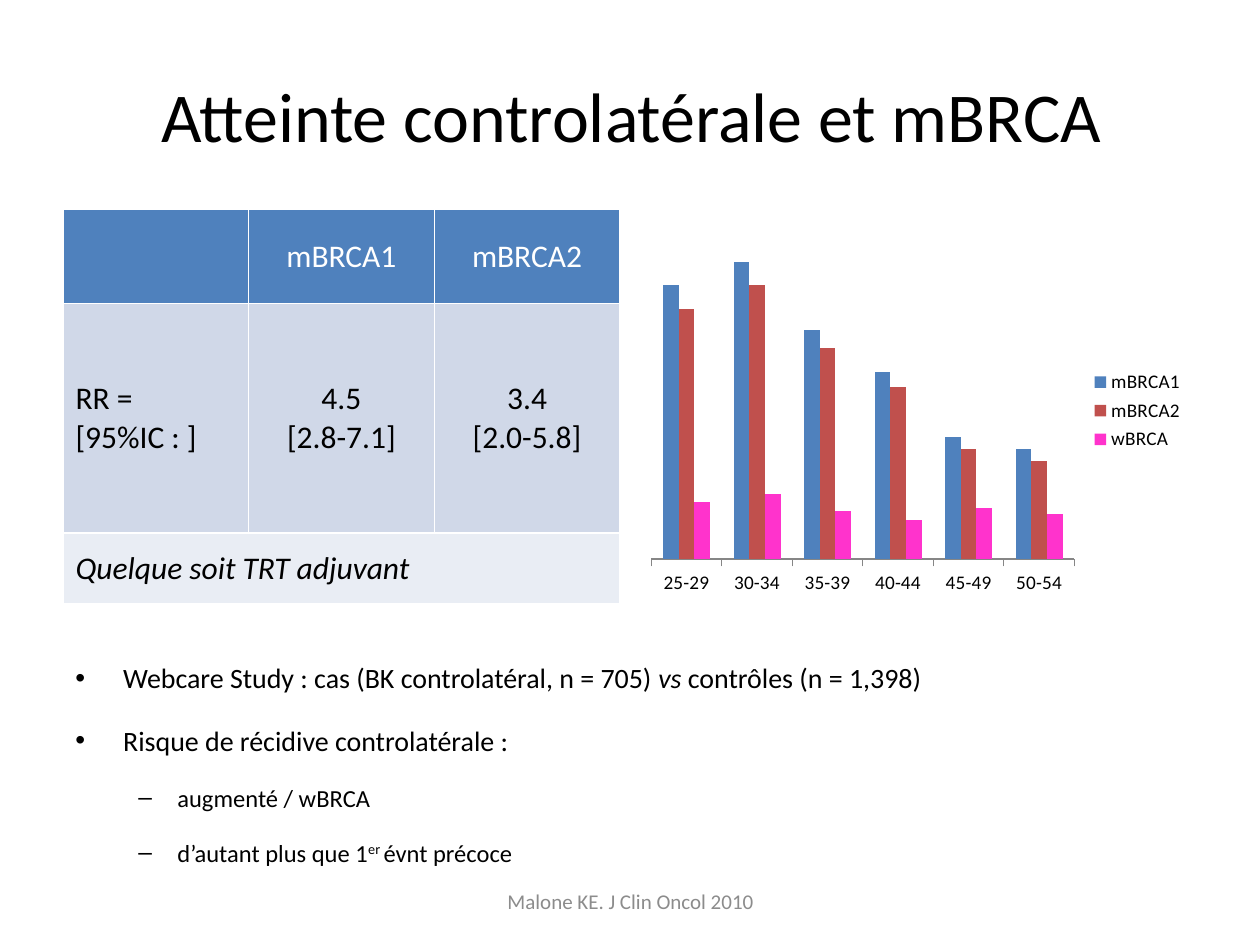
"""Builds a slide on contralateral risk: a table, a bar chart and key points."""
from dataclasses import dataclass, field
from typing import Any

from lxml import etree
from pptx import Presentation, util as u
from pptx.chart.data import CategoryChartData
from pptx.dml.color import RGBColor
from pptx.enum import chart as charts, text
from pptx.oxml import parse_xml
from pptx.oxml.ns import nsdecls, qn


@dataclass
class Theme:
    """Colours, font and type sizes of the slide."""
    font: str = "Calibri"
    black: str = "000000"
    white: str = "FFFFFF"
    grey: str = "8C8C8C"
    axis: str = "868686"
    header: str = "4F81BD"
    bands: tuple = ("D0D8E8", "E9EDF4")
    series: tuple = ("4F81BD", "C0504D", "FF33CC")
    title: int = 40
    cell: int = 18
    levels: tuple = (16, 14)
    source: int = 12
    chart: int = 11


def place(left, top, width, height):
    """Turn inches into a position and size."""
    return [u.Inches(value) for value in (left, top, width, height)]


def add_span(para, words, font, size, color, italic=False, baseline=0):
    """Add one formatted run to a paragraph."""
    span = para.add_run()
    span.text = words
    span.font.name, span.font.size, span.font.italic = font, u.Pt(size), italic
    span.font.color.rgb = RGBColor.from_string(color)
    if baseline:
        span.font._element.set("baseline", str(baseline * 1000))


def add_bullet(para, sign, margin, indent):
    """Give a paragraph a bullet with a hanging indent."""
    properties = para._p.get_or_add_pPr()
    properties.set("marL", str(u.Inches(margin)))
    properties.set("indent", str(u.Inches(indent)))
    etree.SubElement(properties, qn("a:buFont"), typeface="Arial")
    etree.SubElement(properties, qn("a:buChar"), char=sign)


def add_borders(cell, color):
    """Draw a one-point line on each side of a cell."""
    for side in "LRTB":
        cell._tc.get_or_add_tcPr().append(parse_xml(
            f'<a:ln{side} {nsdecls("a")} w="12700"><a:solidFill>'
            f'<a:srgbClr val="{color}"/></a:solidFill></a:ln{side}>'))


def set_plot_area(chart, **fractions):
    """Fix the inner plot area as fractions of the chart."""
    area = chart._chartSpace.chart.plotArea
    for old in area.findall(qn("c:layout")):
        area.remove(old)
    values = "".join(f'<c:{key} val="{value}"/>' for key, value in fractions.items())
    area.insert(0, parse_xml(
        f'<c:layout {nsdecls("c")}><c:manualLayout><c:layoutTarget val="inner"/>'
        f'<c:xMode val="edge"/><c:yMode val="edge"/>{values}</c:manualLayout></c:layout>'))


@dataclass
class Builder:
    """Holds the theme and the current slide."""
    slide: Any
    theme: Theme = field(default_factory=Theme)

    def label(self, words, at, size, color):
        """Add a centred line of text."""
        frame = self.slide.shapes.add_textbox(*place(*at)).text_frame
        frame.word_wrap = True
        frame.vertical_anchor = text.MSO_ANCHOR.MIDDLE
        para = frame.paragraphs[0]
        para.alignment = text.PP_ALIGN.CENTER
        add_span(para, words, self.theme.font, size, color)

    def points(self, items, at):
        """Add bulleted points, each a level and its spans."""
        frame = self.slide.shapes.add_textbox(*place(*at)).text_frame
        frame.word_wrap = True
        for index, (level, spans) in enumerate(items):
            para = frame.add_paragraph() if index else frame.paragraphs[0]
            size = self.theme.levels[level]
            para.level, para.line_spacing = level, 1.7
            para.space_before = u.Pt(size * 0.2)
            add_bullet(para, *(("•", 0.38, -0.38), ("–", 0.81, -0.31))[level])
            for words, style in spans:
                add_span(para, words, self.theme.font, size, self.theme.black, **style)

    def cell(self, cell, lines, fill, color, centred, italic):
        """Fill and write one table cell."""
        add_borders(cell, self.theme.white)
        cell.fill.solid()
        cell.fill.fore_color.rgb = RGBColor.from_string(fill)
        cell.vertical_anchor = text.MSO_ANCHOR.MIDDLE
        for index, words in enumerate(lines):
            frame = cell.text_frame
            para = frame.add_paragraph() if index else frame.paragraphs[0]
            para.alignment = text.PP_ALIGN.CENTER if centred else text.PP_ALIGN.LEFT
            add_span(para, words, self.theme.font, self.theme.cell, color, italic)

    def table(self, rows, heights, at):
        """Add a table whose last row is one merged note."""
        last = len(rows) - 1
        table = self.slide.shapes.add_table(len(rows), len(rows[0]), *place(*at)).table
        for row, height in zip(table.rows, heights):
            row.height = u.Inches(height)
        table.cell(last, 0).merge(table.cell(last, len(rows[0]) - 1))
        fills = (self.theme.header, *self.theme.bands)
        for y, row in enumerate(rows):
            for x, lines in enumerate(row):
                color = self.theme.black if y else self.theme.white
                self.cell(table.cell(y, x), lines, fills[y], color, x > 0, y == last)

    def chart(self, categories, series, at):
        """Add a clustered column chart without a value axis."""
        data = CategoryChartData()
        data.categories = categories
        for name, values in series.items():
            data.add_series(name, values)
        chart = self.slide.shapes.add_chart(
            charts.XL_CHART_TYPE.COLUMN_CLUSTERED, *place(*at), data).chart
        chart.has_title = False
        chart.font.name, chart.font.size = self.theme.font, u.Pt(self.theme.chart)
        chart.font.color.rgb = RGBColor.from_string(self.theme.black)
        chart.has_legend = True
        chart.legend.position = charts.XL_LEGEND_POSITION.RIGHT
        chart.legend.include_in_layout = False
        axis = chart.value_axis
        axis.visible = axis.has_major_gridlines = False
        axis.minimum_scale, axis.maximum_scale = 0, 110
        chart.category_axis.major_tick_mark = charts.XL_TICK_MARK.OUTSIDE
        chart.category_axis.format.line.color.rgb = RGBColor.from_string(self.theme.axis)
        plot = chart.plots[0]
        plot.gap_width, plot.overlap, plot.vary_by_categories = 150, 0, False
        for bars, color in zip(plot.series, self.theme.series):
            bars.format.fill.solid()
            bars.format.fill.fore_color.rgb = RGBColor.from_string(color)
        set_plot_area(chart, x=0.02, y=0.03, w=0.76, h=0.86)


def main():
    """Build and save the deck."""
    deck = Presentation()
    deck.slide_width, deck.slide_height = u.Inches(10), u.Inches(7.5)
    page = Builder(deck.slides.add_slide(deck.slide_layouts[6]))
    theme = page.theme
    page.label("Atteinte controlatérale et mBRCA", (0.51, 0.28, 9, 1.25),
               theme.title, theme.black)
    page.chart(
        ["25-29", "30-34", "35-39", "40-44", "45-49", "50-54"],
        {"mBRCA1": (92, 100, 77, 63, 41, 37),
         "mBRCA2": (84, 92, 71, 58, 37, 33),
         "wBRCA": (19, 22, 16, 13, 17, 15)},
        (5.08, 1.75, 4.42, 3.02))
    page.points([
        (0, [("Webcare Study : cas (BK controlatéral, n = 705) ", {}),
             ("vs", {"italic": True}), (" contrôles (n = 1,398)", {})]),
        (0, [("Risque de récidive controlatérale :", {})]),
        (1, [("augmenté / wBRCA", {})]),
        (1, [("d’autant plus que 1", {}), ("er ", {"baseline": 30}),
             ("évnt précoce", {})]),
    ], (0.5, 5.01, 9, 1.69))
    page.table([
        [[], ["mBRCA1"], ["mBRCA2"]],
        [["RR =", "[95%IC : ]"], ["4.5", "[2.8-7.1]"], ["3.4", "[2.0-5.8]"]],
        [["Quelque soit TRT adjuvant"], [], []],
    ], (0.75, 1.82, 0.56), (0.5, 1.66, 4.42, 3.14))
    page.label("Malone KE. J Clin Oncol 2010", (3.42, 6.95, 3.17, 0.4),
               theme.source, theme.grey)
    deck.save("out.pptx")


if __name__ == "__main__":
    main()
